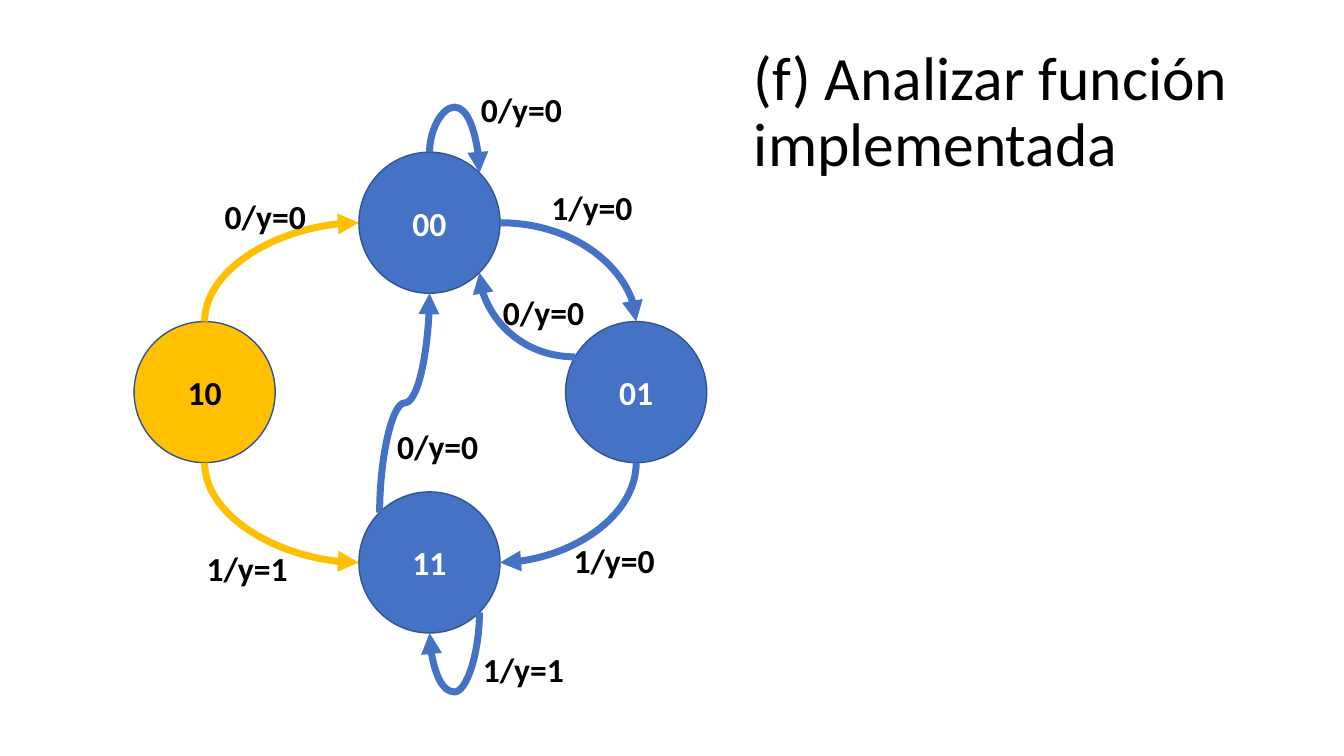
import math

from lxml import etree
from pptx import Presentation, util as u
from pptx.dml.color import RGBColor
from pptx.enum import shapes, text
from pptx.oxml import ns

COLORS = {"blue": "4472C4", "outline": "325491", "gold": "FFC000",
          "black": "000000", "white": "FFFFFF"}
DIAMETER = 1.4
RIGHT, BOTTOM_RIGHT, BOTTOM, LEFT, TOP_LEFT, TOP, TOP_RIGHT = 0, 45, 90, 180, 225, 270, 315

# State: center x, center y, fill, text color
STATES = {
    "00": (4.26, 2.21, "blue", "white"),
    "11": (4.26, 5.58, "blue", "white"),
    "01": (6.31, 3.89, "blue", "white"),
    "10": (2.03, 3.89, "gold", "black"),
}

# From state, angle, to state, angle, starts vertically, bend (None for a quarter arc), color
TRANSITIONS = [
    ("00", RIGHT, "01", TOP, False, None, "blue"),
    ("01", BOTTOM, "11", RIGHT, True, None, "blue"),
    ("10", BOTTOM, "11", LEFT, True, None, "gold"),
    ("10", TOP, "00", LEFT, True, None, "gold"),
    ("11", TOP_LEFT, "00", BOTTOM, True, 0.5, "blue"),
    ("01", 210, "00", BOTTOM_RIGHT, False, None, "blue"),
    ("00", TOP, "00", TOP_RIGHT, True, -2.18, "blue"),
    ("11", BOTTOM_RIGHT, "11", BOTTOM, True, 3.85, "blue"),
]

LABELS = [
    ("1/y=0", 5.37, 1.81), ("1/y=0", 5.59, 5.31), ("1/y=1", 1.95, 5.39),
    ("0/y=0", 2.13, 1.89), ("0/y=0", 3.84, 4.18), ("0/y=0", 4.89, 2.85),
    ("0/y=0", 4.67, 0.83), ("1/y=1", 4.69, 6.39),
]


def rgb(name):
    return RGBColor.from_string(COLORS[name])


def format_text(shape, size, color, bold=False):
    for paragraph in shape.text_frame.paragraphs:
        for run in paragraph.runs:
            run.font.name = "Calibri"
            run.font.size = u.Pt(size)
            run.font.bold = bold
            run.font.color.rgb = rgb(color)


def add_text(slide, content, left, top, width, height, size, bold=False):
    box = slide.shapes.add_textbox(*map(u.Inches, (left, top, width, height)))
    box.text_frame.word_wrap = True
    box.text_frame.text = content
    format_text(box, size, "black", bold)
    return box


def add_title(slide, content):
    title = add_text(slide, content, 7.38, 0.4, 5.04, 1.45, 44)
    title.text_frame.vertical_anchor = text.MSO_ANCHOR.MIDDLE
    title.text_frame.paragraphs[0].line_spacing = 0.9


def add_state(slide, name):
    x, y, fill, color = STATES[name]
    circle = slide.shapes.add_shape(
        shapes.MSO_SHAPE.OVAL, u.Inches(x - DIAMETER / 2), u.Inches(y - DIAMETER / 2),
        u.Inches(DIAMETER), u.Inches(DIAMETER))
    circle.shadow.inherit = False
    circle.fill.solid()
    circle.fill.fore_color.rgb = rgb(fill)
    circle.line.color.rgb = rgb("outline")
    circle.line.width = u.Pt(1)
    circle.text_frame.text = name
    circle.text_frame.vertical_anchor = text.MSO_ANCHOR.MIDDLE
    circle.text_frame.paragraphs[0].alignment = text.PP_ALIGN.CENTER
    format_text(circle, 24, color, True)
    return circle


def rim_point(state, angle):
    x, y = STATES[state][:2]
    radians = math.radians(angle)
    return x + DIAMETER / 2 * math.cos(radians), y + DIAMETER / 2 * math.sin(radians)


def glue(connector, tag, circle, angle):
    """Attach one end to a connection site; sites run every 45 degrees from the top."""
    if angle % 45 == 0:
        properties = connector._element.find(".//" + ns.qn("p:cNvCxnSpPr"))
        etree.SubElement(properties, ns.qn(tag), id=str(circle.shape_id),
                         idx=str((TOP - angle) % 360 // 45))


def add_transition(slide, circles, start, start_angle, end, end_angle, vertical, bend, color):
    x1, y1 = rim_point(start, start_angle)
    x2, y2 = rim_point(end, end_angle)
    dx, dy = x2 - x1, y2 - y1
    width, height = abs(dx), abs(dy)
    flip_h, flip_v, rotation = dx < 0, dy < 0, 0
    if vertical:
        width, height = height, width
        flip_h, rotation = dx > 0, 270 if dx > 0 and dy > 0 else 90
    elif flip_h and flip_v:
        flip_h, flip_v, rotation = False, False, 180

    # Frame before rotation, centered between both ends
    left, top = (x1 + x2 - width) / 2, (y1 + y2 - height) / 2
    connector = slide.shapes.add_connector(
        shapes.MSO_CONNECTOR.CURVE,
        *map(u.Inches, (left, top, left + width, top + height)))
    properties = connector._element.spPr
    frame = properties.find(ns.qn("a:xfrm"))
    frame.set("rot", str(rotation * 60000))
    frame.set("flipH", str(int(flip_h)))
    frame.set("flipV", str(int(flip_v)))
    geometry = properties.find(ns.qn("a:prstGeom"))
    if bend is None:
        geometry.set("prst", "curvedConnector2")
    else:
        guides = geometry.find(ns.qn("a:avLst"))
        etree.SubElement(guides, ns.qn("a:gd"), name="adj1",
                         fmla=f"val {round(bend * 100000)}")
    glue(connector, "a:stCxn", circles[start], start_angle)
    glue(connector, "a:endCxn", circles[end], end_angle)

    # Line, arrowhead and no shadow
    connector.line.color.rgb = rgb(color)
    connector.line.width = u.Pt(5)
    etree.SubElement(properties.find(ns.qn("a:ln")), ns.qn("a:tailEnd"), type="triangle")
    etree.SubElement(properties, ns.qn("a:effectLst"))


def main():
    presentation = Presentation()
    presentation.slide_width = u.Inches(13.33)
    presentation.slide_height = u.Inches(7.5)
    slide = presentation.slides.add_slide(presentation.slide_layouts[6])

    add_title(slide, "(f) Analizar función implementada")
    circles = {name: add_state(slide, name) for name in STATES}
    for transition in TRANSITIONS:
        add_transition(slide, circles, *transition)
    for content, left, top in LABELS:
        add_text(slide, content, left, top, 1.79, 0.5, 24, True)

    presentation.save("out.pptx")


if __name__ == "__main__":
    main()
